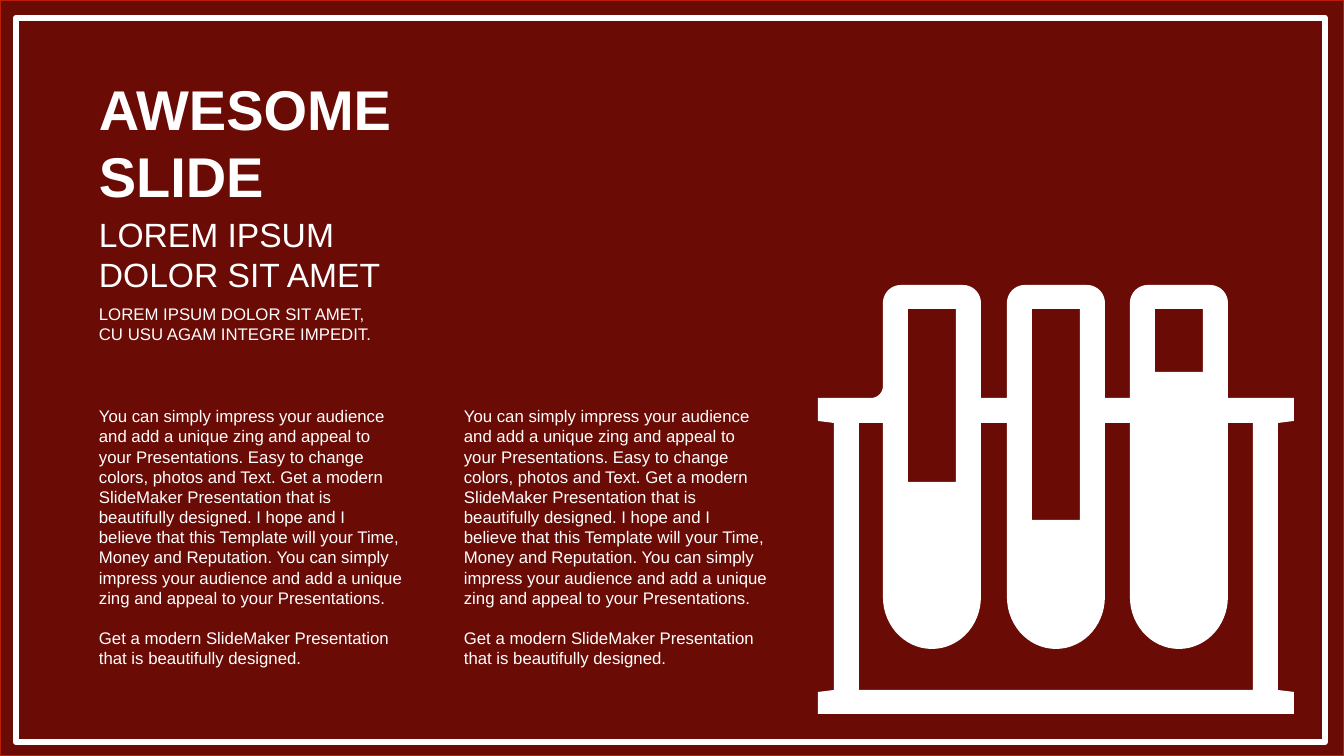
from math import cos, radians, sin

from pptx import Presentation
from pptx.dml.color import RGBColor
from pptx.enum.shapes import MSO_SHAPE
from pptx.enum.text import MSO_ANCHOR, MSO_AUTO_SIZE
from pptx.util import Pt

EMU_PER_PX = 914400 / 100.8
RECTANGLE = MSO_SHAPE.RECTANGLE
TOP, MIDDLE = MSO_ANCHOR.TOP, MSO_ANCHOR.MIDDLE
GROW = MSO_AUTO_SIZE.SHAPE_TO_FIT_TEXT
MAROON, RED, WHITE = "6A0B05", "BB1E04", "FFFFFF"
LINE_PITCH = 1.2

TEXT_LEFT, TEXT_WIDTH, COLUMN_PITCH = 89, 324, 365
HEADINGS = [
    ("AWESOME\nSLIDE", 67, 150, 40, True),
    ("LOREM IPSUM\nDOLOR SIT AMET", 207, 94, 24, False),
    ("LOREM IPSUM DOLOR SIT AMET,\nCU USU AGAM INTEGRE IMPEDIT.", 298, 52, 12, False),
]
BODY = (
    "You can simply impress your audience and add a unique zing and appeal to "
    "your Presentations. Easy to change colors, photos and Text. Get a modern "
    "SlideMaker Presentation that is beautifully designed. I hope and I believe "
    "that this Template will your Time, Money and Reputation. You can simply "
    "impress your audience and add a unique zing and appeal to your Presentations.\n"
    "Get a modern SlideMaker Presentation that is beautifully designed."
)

TUBES = [(883, 482), (1007, 520), (1130, 372)]
TUBE_WIDTH, TUBE_TOP, TUBE_CORNER = 98, 285, 18
TUBE_ROUND_TOP, TUBE_ROUND_DEPTH = 597, 52
WINDOW_TOP, WINDOW_INSET = 309, 25
BAR_TOP, BAR_BOTTOM, BASE_TOP, BASE_BOTTOM = 398, 423, 690, 714
RACK_LEFT, RACK_RIGHT = 818, 1294
POST_INSET, POST_WIDTH, FLARE, FILLET = 16, 25, 2, 12


def px(length):
    """Turn a length in px into EMU."""
    return round(length * EMU_PER_PX)


def color(hex_code):
    """Turn a hex string into a colour."""
    return RGBColor.from_string(hex_code)


def add_panel(slide, left, top, width, height, fill, line, line_width):
    """Add a rectangle with an outline and an optional fill."""
    panel = slide.shapes.add_shape(RECTANGLE, px(left), px(top), px(width), px(height))
    panel.shadow.inherit = False
    if fill:
        panel.fill.solid()
        panel.fill.fore_color.rgb = color(fill)
    else:
        panel.fill.background()
    panel.line.color.rgb = color(line)
    panel.line.width = Pt(line_width)


def add_text(slide, text, left, top, height, size, bold=False, anchor=MIDDLE, gap=0):
    """Add white text, with a gap in points before each later paragraph."""
    box = slide.shapes.add_textbox(px(left), px(top), px(TEXT_WIDTH), px(height))
    frame = box.text_frame
    frame.text = text
    frame.word_wrap = True
    frame.auto_size = GROW
    frame.vertical_anchor = anchor
    for index, paragraph in enumerate(frame.paragraphs):
        paragraph.line_spacing = Pt(size * LINE_PITCH)
        paragraph.space_before = Pt(gap if index else 0)
        for run in paragraph.runs:
            run.font.name = "Arial"
            run.font.size = Pt(size)
            run.font.bold = bold
            run.font.color.rgb = color(WHITE)


def arc(center_x, center_y, radius_x, radius_y, start, end):
    """List points along an arc, with angles in degrees clockwise from the right."""
    steps = abs(end - start) // 6
    angles = [radians(start + (end - start) * step / steps) for step in range(steps + 1)]
    return [(center_x + radius_x * cos(a), center_y + radius_y * sin(a)) for a in angles]


def rack_outline():
    """List the outer edge of the rack with the tube tops above its bar."""
    post_left, post_right = RACK_LEFT + POST_INSET, RACK_RIGHT - POST_INSET
    points = [(post_left, BASE_TOP), (post_left, BAR_BOTTOM),
              (RACK_LEFT, BAR_BOTTOM - FLARE), (RACK_LEFT, BAR_TOP)]
    points += arc(TUBES[0][0] - FILLET, BAR_TOP - FILLET, FILLET, FILLET, 90, 0)
    for left, _ in TUBES:
        right, corner_y = left + TUBE_WIDTH, TUBE_TOP + TUBE_CORNER
        if left != TUBES[0][0]:
            points.append((left, BAR_TOP))
        points += arc(left + TUBE_CORNER, corner_y, TUBE_CORNER, TUBE_CORNER, 180, 270)
        points += arc(right - TUBE_CORNER, corner_y, TUBE_CORNER, TUBE_CORNER, 270, 360)
        points.append((right, BAR_TOP))
    return points + [
        (RACK_RIGHT, BAR_TOP), (RACK_RIGHT, BAR_BOTTOM - FLARE),
        (post_right, BAR_BOTTOM), (post_right, BASE_TOP),
        (RACK_RIGHT, BASE_TOP + FLARE), (RACK_RIGHT, BASE_BOTTOM),
        (RACK_LEFT, BASE_BOTTOM), (RACK_LEFT, BASE_TOP + FLARE)]


def rack_opening():
    """List the edge of the opening around the hanging tubes."""
    left_edge = RACK_LEFT + POST_INSET + POST_WIDTH
    right_edge = RACK_RIGHT - POST_INSET - POST_WIDTH
    radius = TUBE_WIDTH / 2
    points = [(left_edge, BAR_BOTTOM)]
    for left, _ in TUBES:
        points.append((left, BAR_BOTTOM))
        points += arc(left + radius, TUBE_ROUND_TOP, radius, TUBE_ROUND_DEPTH, 180, 0)
        points.append((left + TUBE_WIDTH, BAR_BOTTOM))
    return points + [(right_edge, BAR_BOTTOM), (right_edge, BASE_TOP), (left_edge, BASE_TOP)]


def tube_window(tube_left, liquid_top):
    """List the corners of the empty part of a tube."""
    left, right = tube_left + WINDOW_INSET, tube_left + TUBE_WIDTH - WINDOW_INSET
    return [(left, WINDOW_TOP), (left, liquid_top), (right, liquid_top), (right, WINDOW_TOP)]


def add_test_tube_rack(slide):
    """Add the rack as one white outline with its openings cut out."""
    contours = [rack_outline(), rack_opening()] + [tube_window(*tube) for tube in TUBES]
    scaled = [[(px(x), px(y)) for x, y in contour] for contour in contours]
    builder = slide.shapes.build_freeform(*scaled[0][0])
    builder.add_line_segments(scaled[0][1:], close=True)
    for contour in scaled[1:]:
        builder.move_to(*contour[0])
        builder.add_line_segments(contour[1:], close=True)
    rack = builder.convert_to_shape()
    rack.shadow.inherit = False
    rack.fill.solid()
    rack.fill.fore_color.rgb = color(WHITE)
    rack.line.fill.background()


def main():
    """Build the slide and save it."""
    deck = Presentation()
    deck.slide_width, deck.slide_height = px(1344), px(756)
    slide = deck.slides.add_slide(deck.slide_layouts[6])
    add_panel(slide, 0, 0, 1344, 756, MAROON, RED, 1)
    for text, top, height, size, bold in HEADINGS:
        add_text(slide, text, TEXT_LEFT, top, height, size, bold)
    for column in range(2):
        add_text(slide, BODY, TEXT_LEFT + column * COLUMN_PITCH, 401, 275, 12,
                 anchor=TOP, gap=12 * LINE_PITCH)
    add_test_tube_rack(slide)
    add_panel(slide, 16, 18, 1309, 724, None, WHITE, 4.5)
    deck.save("out.pptx")


if __name__ == "__main__":
    main()
